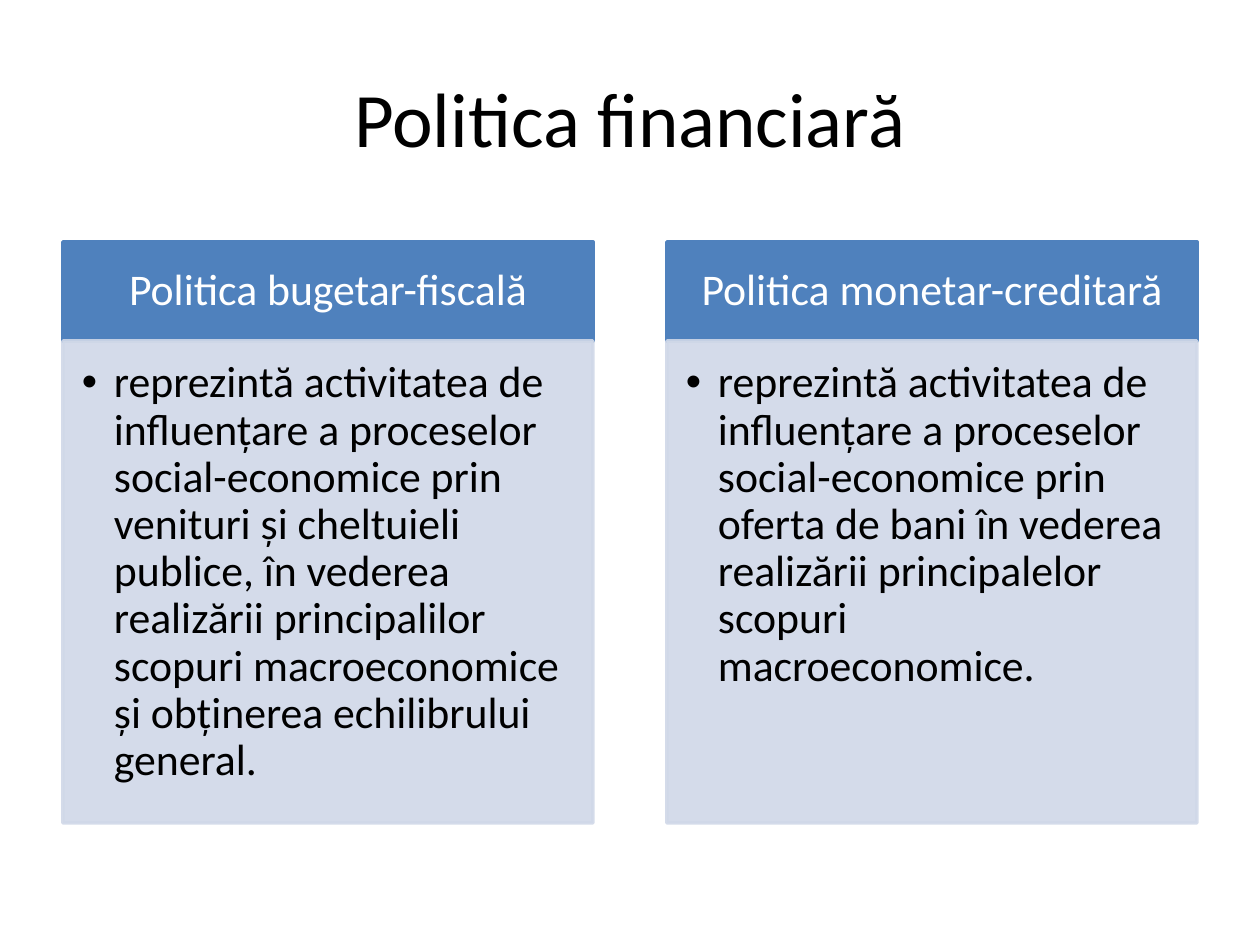
from dataclasses import dataclass

from lxml.etree import SubElement
from pptx import Presentation
from pptx.dml.color import RGBColor
from pptx.enum.lang import MSO_LANGUAGE_ID
from pptx.enum.shapes import MSO_SHAPE
from pptx.enum.text import MSO_ANCHOR, PP_ALIGN
from pptx.oxml.ns import qn
from pptx.shapes.autoshape import Shape
from pptx.slide import Slide
from pptx.util import Emu, Inches, Pt

PX_PER_INCH = 126
SLIDE_WIDTH, SLIDE_HEIGHT = 1260, 945
MARGIN = 63
COLUMN_WIDTH = 530
HEADER_TOP, HEADER_HEIGHT = 242, 99
BODY_HEIGHT = 482
BULLET_INDENT = 32

BLUE, PALE_BLUE = "4F81BD", "D0D8E8"
BLACK, WHITE = "000000", "FFFFFF"


@dataclass(frozen=True)
class Policy:
    heading: str
    description: str


@dataclass(frozen=True)
class Box:
    left: int
    top: int
    width: int
    height: int


@dataclass(frozen=True)
class Insets:
    left: int
    top: int
    right: int
    bottom: int


HEADER_INSETS = Insets(24, 14, 24, 14)
BODY_INSETS = Insets(19, 19, 24, 28)

POLICIES = [
    Policy(
        "Politica bugetar-fiscală",
        "reprezintă activitatea de influenţare a proceselor social-economice "
        "prin venituri şi cheltuieli publice, în vederea realizării principalilor "
        "scopuri macroeconomice şi obţinerea echilibrului general.",
    ),
    Policy(
        "Politica monetar-creditară",
        "reprezintă activitatea de influenţare a proceselor social-economice "
        "prin oferta de bani în vederea realizării principalelor scopuri "
        "macroeconomice.",
    ),
]


def px(length: int) -> Emu:
    return Emu(round(length * Inches(1) / PX_PER_INCH))


def rgb(color: str) -> RGBColor:
    return RGBColor.from_string(color)


def write(shape: Shape, text: str, size: int, color: str, align: PP_ALIGN,
          anchor: MSO_ANCHOR, line_spacing: float = 1.0) -> None:
    frame = shape.text_frame
    frame.text = text
    frame.word_wrap = True
    frame.vertical_anchor = anchor
    paragraph = frame.paragraphs[0]
    paragraph.alignment = align
    paragraph.line_spacing = line_spacing
    font = paragraph.runs[0].font
    font.name, font.size = "Calibri", Pt(size)
    font.color.rgb = rgb(color)
    font.language_id = MSO_LANGUAGE_ID.ROMANIAN


def add_panel(slide: Slide, box: Box, color: str, insets: Insets) -> Shape:
    panel = slide.shapes.add_shape(
        MSO_SHAPE.RECTANGLE,
        px(box.left), px(box.top), px(box.width), px(box.height))
    panel.shadow.inherit = False
    panel.fill.solid()
    panel.fill.fore_color.rgb = rgb(color)
    panel.line.color.rgb = rgb(color)
    panel.line.width = Pt(2)
    frame = panel.text_frame
    frame.margin_left, frame.margin_top = px(insets.left), px(insets.top)
    frame.margin_right, frame.margin_bottom = px(insets.right), px(insets.bottom)
    return panel


def set_opacity(panel: Shape, percent: int) -> None:
    """Apply the opacity to both the fill and the outline."""
    for color in panel._element.spPr.iter(qn("a:srgbClr")):
        SubElement(color, qn("a:alpha"), val=str(percent * 1000))


def add_bullet(panel: Shape) -> None:
    properties = panel.text_frame.paragraphs[0]._p.get_or_add_pPr()
    properties.set("marL", str(px(BULLET_INDENT)))
    properties.set("indent", str(-px(BULLET_INDENT)))
    SubElement(properties, qn("a:buFont"), typeface="Arial")
    SubElement(properties, qn("a:buChar"), char="•")


def add_policy(slide: Slide, policy: Policy, left: int) -> None:
    header = add_panel(
        slide, Box(left, HEADER_TOP, COLUMN_WIDTH, HEADER_HEIGHT),
        BLUE, HEADER_INSETS)
    write(header, policy.heading, 25, WHITE,
          PP_ALIGN.CENTER, MSO_ANCHOR.MIDDLE, 0.9)

    body = add_panel(
        slide, Box(left, HEADER_TOP + HEADER_HEIGHT, COLUMN_WIDTH, BODY_HEIGHT),
        PALE_BLUE, BODY_INSETS)
    set_opacity(body, 90)
    write(body, policy.description, 25, BLACK,
          PP_ALIGN.LEFT, MSO_ANCHOR.TOP, 0.9)
    add_bullet(body)


def main() -> None:
    presentation = Presentation()
    presentation.slide_width = px(SLIDE_WIDTH)
    presentation.slide_height = px(SLIDE_HEIGHT)
    slide = presentation.slides.add_slide(presentation.slide_layouts[6])

    title = slide.shapes.add_textbox(
        px(MARGIN), px(38), px(SLIDE_WIDTH - 2 * MARGIN), px(157))
    write(title, "Politica financiară", 44, BLACK,
          PP_ALIGN.CENTER, MSO_ANCHOR.MIDDLE)

    column_step = SLIDE_WIDTH - 2 * MARGIN - COLUMN_WIDTH
    for index, policy in enumerate(POLICIES):
        add_policy(slide, policy, MARGIN + index * column_step)

    presentation.save("out.pptx")


if __name__ == "__main__":
    main()
